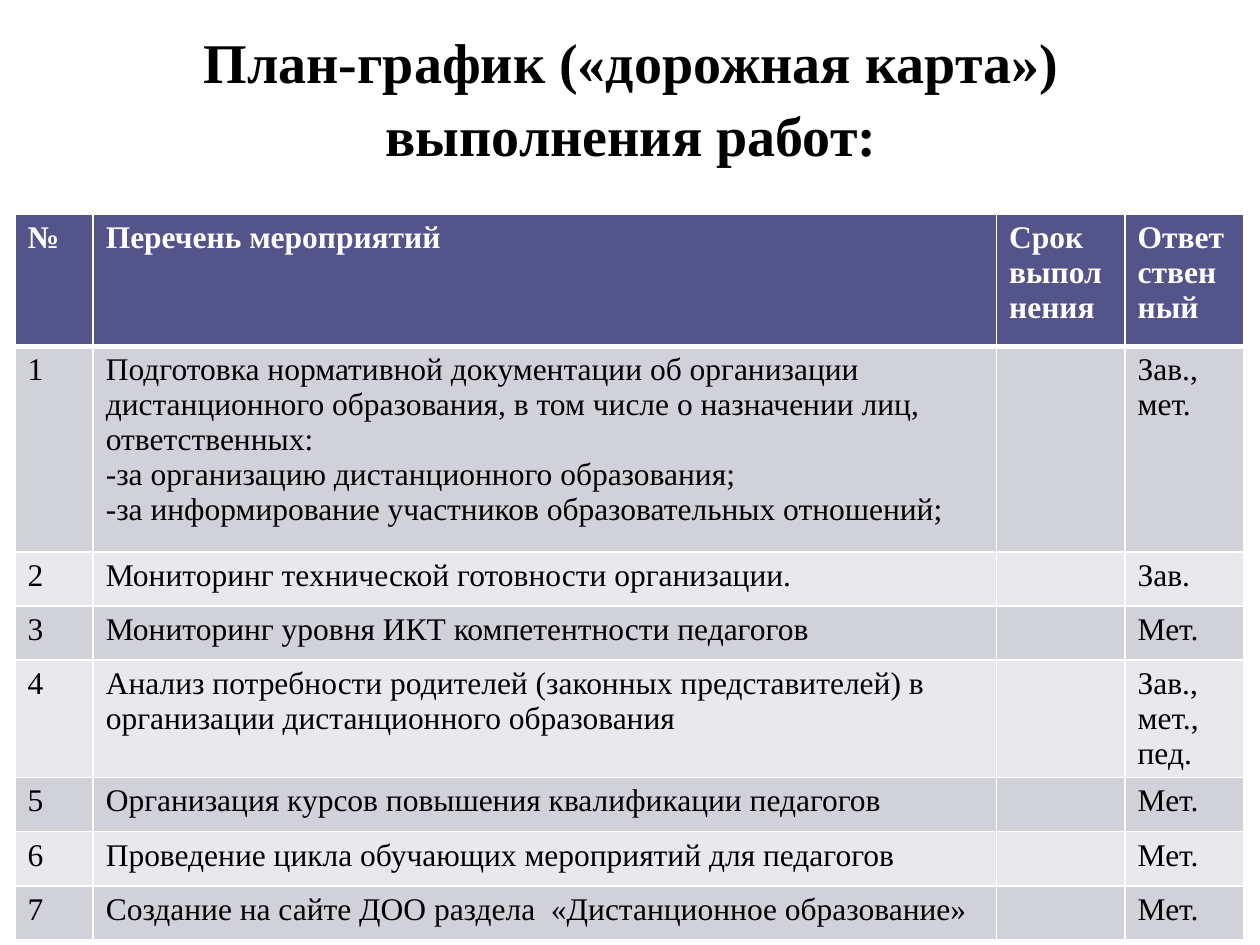
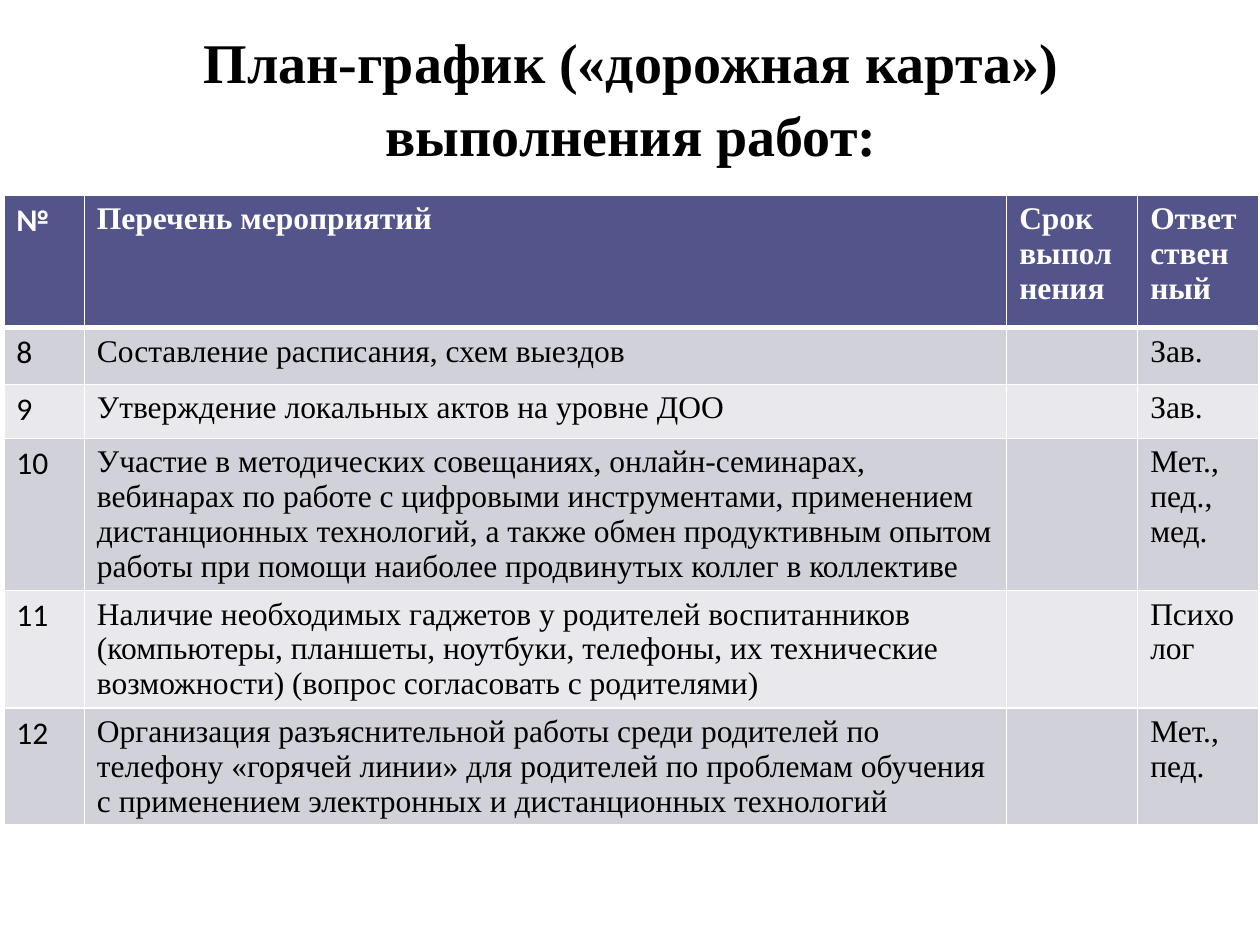
from lxml.etree import SubElement
from pptx import Presentation
from pptx.dml.color import RGBColor
from pptx.enum.text import MSO_ANCHOR, MSO_AUTO_SIZE, PP_ALIGN
from pptx.oxml.ns import qn
from pptx.util import Inches, Pt

TITLE = "План-график («дорожная карта») выполнения работ:"
HEADERS = ("№", "Перечень мероприятий", "Срок выполнения", "Ответственный")
SERIF = "Times New Roman"
SANS = "Calibri"

ROADMAPS = [
    {
        "position": (0.12, 1.7),
        "columns": (0.62, 7.17, 1.02, 0.94),
        "rows": (1.05, 1.63, 0.43, 0.43, 0.74, 0.43, 0.43, 0.43),
        "number_font": SERIF,
        "first_number": 1,
        "activities": [
            ("Подготовка нормативной документации об организации дистанционного "
             "образования, в том числе о назначении лиц, ответственных:\n"
             "-за организацию дистанционного образования;\n"
             "-за информирование участников образовательных отношений;", "Зав., мет."),
            ("Мониторинг технической готовности организации.", "Зав."),
            ("Мониторинг уровня ИКТ компетентности педагогов", "Мет."),
            ("Анализ потребности родителей (законных представителей) в организации "
             "дистанционного образования", "Зав., мет., пед."),
            ("Организация курсов повышения квалификации педагогов", "Мет."),
            ("Проведение цикла обучающих мероприятий для педагогов", "Мет."),
            ("Создание на сайте ДОО раздела  «Дистанционное образование»", "Мет."),
        ],
    },
    {
        "position": (0.03, 1.55),
        "columns": (0.64, 7.32, 1.04, 0.96),
        "rows": (1.05, 0.45, 0.43, 0.74, 0.43, 0.43),
        "number_font": SANS,
        "first_number": 8,
        "activities": [
            ("Составление расписания, схем выездов", "Зав."),
            ("Утверждение локальных актов на уровне ДОО", "Зав."),
            ("Участие в методических совещаниях, онлайн-семинарах, вебинарах по работе "
             "с цифровыми инструментами, применением дистанционных технологий, а также "
             "обмен продуктивным опытом работы при помощи наиболее продвинутых коллег "
             "в коллективе", "Мет., пед., мед."),
            ("Наличие необходимых гаджетов у родителей воспитанников (компьютеры, "
             "планшеты, ноутбуки, телефоны, их технические возможности) (вопрос "
             "согласовать с родителями)", "Психолог"),
            ("Организация разъяснительной работы среди родителей по телефону «горячей "
             "линии» для родителей по проблемам обучения с применением электронных и "
             "дистанционных технологий", "Мет., пед."),
        ],
    },
]

BLACK = RGBColor(0x00, 0x00, 0x00)
WHITE = RGBColor(0xFF, 0xFF, 0xFF)
HEADER_FILL = RGBColor(0x53, 0x54, 0x8A)
BAND_FILLS = (RGBColor(0xE9, 0xE9, 0xED), RGBColor(0xD1, 0xD1, 0xDA))


def add_run(paragraph, text, size, font_name, color, bold):
    run = paragraph.add_run()
    run.text = text
    run.font.size = Pt(size)
    run.font.name = font_name
    run.font.color.rgb = color
    run.font.bold = bold


def set_borders(cell, row_index):
    properties = cell._tc.get_or_add_tcPr()
    widths = {
        "a:lnL": 1,
        "a:lnR": 1,
        "a:lnT": 3 if row_index == 1 else 1,
        "a:lnB": 3 if row_index == 0 else 1,
    }
    for tag, width in widths.items():
        line = SubElement(properties, qn(tag), w=str(Pt(width)))
        fill = SubElement(line, qn("a:solidFill"))
        SubElement(fill, qn("a:srgbClr"), val=str(WHITE))


def fill_cell(cell, text, row_index, font_name):
    is_header = row_index == 0
    set_borders(cell, row_index)
    cell.fill.solid()
    cell.fill.fore_color.rgb = HEADER_FILL if is_header else BAND_FILLS[row_index % 2]
    frame = cell.text_frame
    if not text:
        frame.paragraphs[0].font.size = Pt(18)
        return
    for index, line in enumerate(text.split("\n")):
        paragraph = frame.add_paragraph() if index else frame.paragraphs[0]
        add_run(paragraph, line, 18, font_name, WHITE if is_header else BLACK, is_header)


def format_title(title):
    title.left, title.top = Inches(0.51), Inches(0.13)
    title.width, title.height = Inches(9), Inches(1.25)
    frame = title.text_frame
    frame.word_wrap = True
    frame.auto_size = MSO_AUTO_SIZE.NONE
    frame.vertical_anchor = MSO_ANCHOR.MIDDLE
    paragraph = frame.paragraphs[0]
    paragraph.alignment = PP_ALIGN.CENTER
    paragraph.line_spacing = 1.08
    add_run(paragraph, TITLE, 32, SERIF, BLACK, True)


def add_roadmap(slide, roadmap):
    left, top = roadmap["position"]
    columns, rows = roadmap["columns"], roadmap["rows"]
    table = slide.shapes.add_table(
        len(rows), len(columns), Inches(left), Inches(top),
        Inches(sum(columns)), Inches(sum(rows)),
    ).table
    table.horz_banding = False
    for column, width in zip(table.columns, columns):
        column.width = Inches(width)
    for row, height in zip(table.rows, rows):
        row.height = Inches(height)

    numbered = enumerate(roadmap["activities"], roadmap["first_number"])
    contents = [HEADERS] + [
        (str(number), activity, "", person) for number, (activity, person) in numbered
    ]
    for row_index, texts in enumerate(contents):
        for column_index, text in enumerate(texts):
            font_name = SERIF if column_index else roadmap["number_font"]
            fill_cell(table.cell(row_index, column_index), text, row_index, font_name)


def main():
    presentation = Presentation()
    presentation.slide_width, presentation.slide_height = Inches(10), Inches(7.5)
    for roadmap in ROADMAPS:
        slide = presentation.slides.add_slide(presentation.slide_layouts[5])
        format_title(slide.shapes.title)
        add_roadmap(slide, roadmap)
    presentation.save("out.pptx")


if __name__ == "__main__":
    main()
